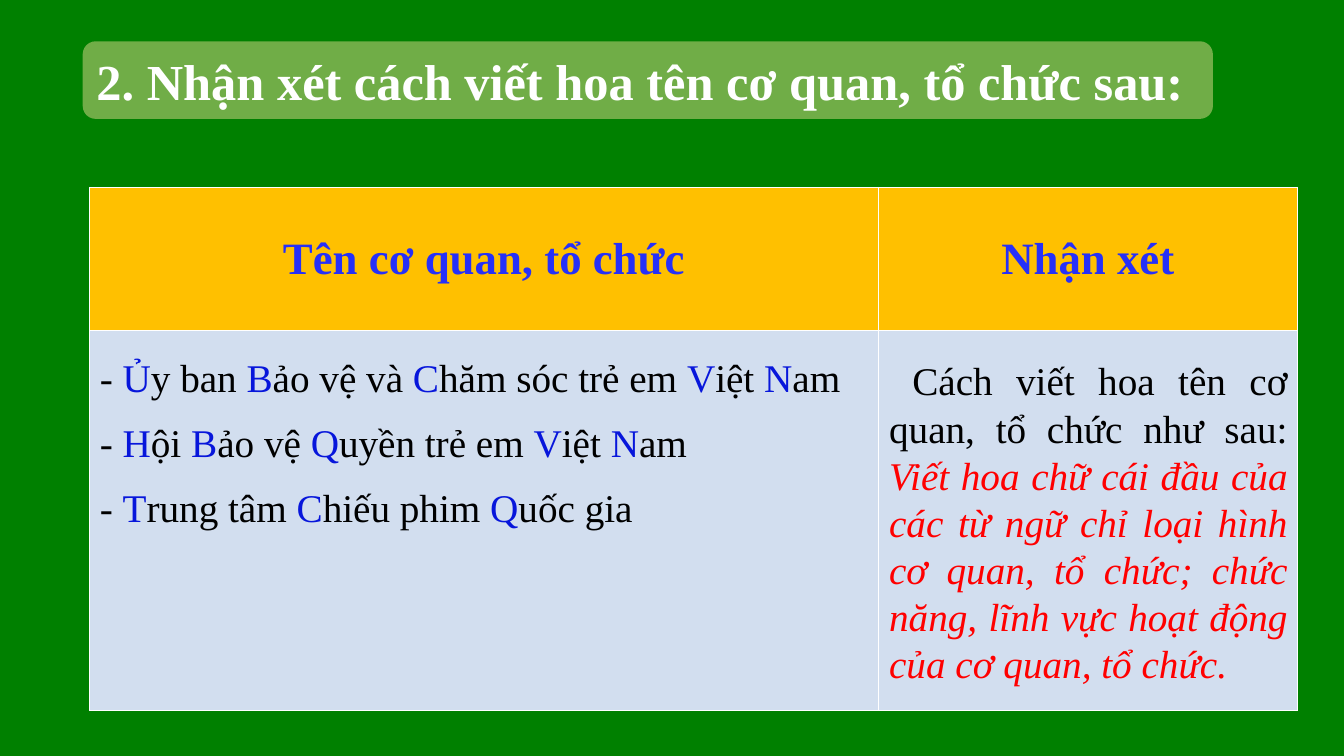
"""Build the slide on capitalising the names of agencies and organisations."""
from itertools import groupby
from pptx import Presentation, util as u
from pptx.dml.color import RGBColor
from pptx.enum import shapes, text


def paint(fill, color):
    fill.solid()
    fill.fore_color.rgb = RGBColor.from_string(color)


def style(font, size, color, bold=False, italic=False):
    font.name = "Times New Roman"
    font.size = u.Pt(size)
    font.bold = bold
    font.italic = italic
    paint(font.fill, color)


deck = Presentation()
deck.slide_width = u.Inches(13.33)
deck.slide_height = u.Inches(7.5)
slide = deck.slides.add_slide(deck.slide_layouts[6])
paint(slide.background.fill, "008000")

title = slide.shapes.add_shape(
    shapes.MSO_SHAPE.ROUNDED_RECTANGLE,
    u.Inches(0.82), u.Inches(0.41), u.Inches(11.21), u.Inches(0.77))
title.shadow.inherit = False
paint(title.fill, "70AD47")
title.line.fill.background()
frame = title.text_frame
frame.text = "2. Nhận xét cách viết hoa tên cơ quan, tổ chức sau:"
frame.word_wrap = True
frame.vertical_anchor = text.MSO_ANCHOR.MIDDLE
para = frame.paragraphs[0]
para.alignment = text.PP_ALIGN.JUSTIFY
style(para.runs[0].font, 36, "FFFFFF", bold=True)

table = slide.shapes.add_table(
    2, 2, u.Inches(0.89), u.Inches(1.86), u.Inches(11.98), u.Inches(5.19)).table
table.horz_banding = False
for col, width in zip(table.columns, (7.82, 4.16)):
    col.width = u.Inches(width)
for row, height, color in zip(table.rows, (1.42, 3.77), ("FFC000", "D2DEEF")):
    row.height = u.Inches(height)
    for cell in row.cells:
        paint(cell.fill, color)

for cell, head in zip(table.rows[0].cells, ("Tên cơ quan, tổ chức", "Nhận xét")):
    cell.text_frame.text = head
    cell.vertical_anchor = text.MSO_ANCHOR.MIDDLE
    para = cell.text_frame.paragraphs[0]
    para.alignment = text.PP_ALIGN.CENTER
    style(para.runs[0].font, 32, "2630F8", bold=True)

names = (
    "- Ủy ban Bảo vệ và Chăm sóc trẻ em Việt Nam",
    "- Hội Bảo vệ Quyền trẻ em Việt Nam",
    "- Trung tâm Chiếu phim Quốc gia",
)
frame = table.cell(1, 0).text_frame
frame.text = "\n".join(names)
for para, name in zip(frame.paragraphs, names):
    para.text = ""
    para.line_spacing = 1.5
    for upper, chars in groupby(name, str.isupper):
        run = para.add_run()
        run.text = "".join(chars)
        style(run.font, 28, "0716DB" if upper else "000000")

note = slide.shapes.add_textbox(
    u.Inches(8.72), u.Inches(3.49), u.Inches(4.15), u.Inches(4.1))
frame = note.text_frame
frame.word_wrap = True
para = frame.paragraphs[0]
para.alignment = text.PP_ALIGN.JUSTIFY
para._p.get_or_add_pPr().set("indent", str(u.Inches(0.23)))
for words, color, italic in (
    ("Cách viết hoa tên cơ quan, tổ chức như sau: ", "000000", False),
    ("Viết hoa chữ cái đầu của các từ ngữ chỉ loại hình cơ quan, tổ chức; "
     "chức năng, lĩnh vực hoạt động của cơ quan, tổ chức.", "FF0000", True),
):
    run = para.add_run()
    run.text = words
    style(run.font, 28, color, italic=italic)

deck.save("out.pptx")
